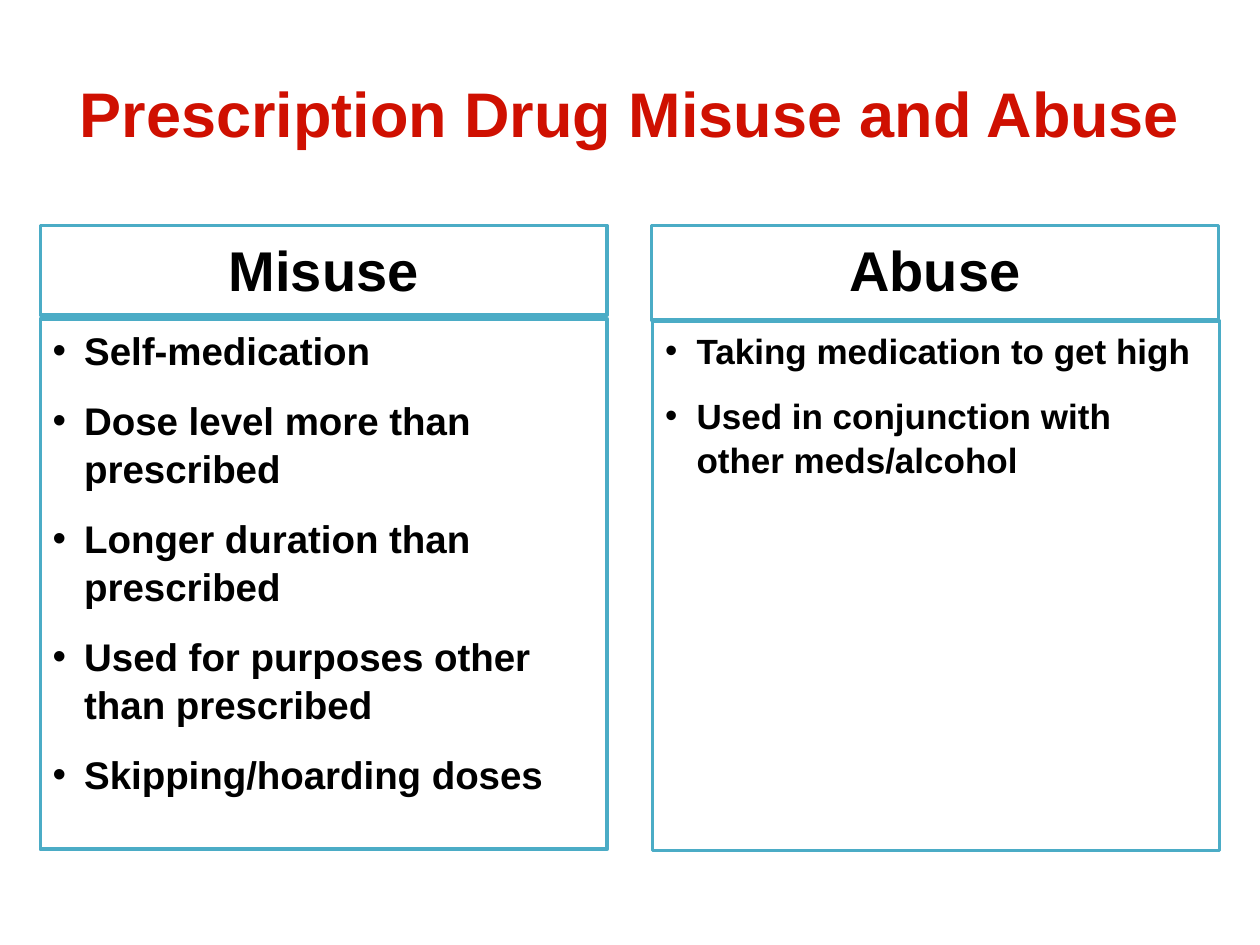
from lxml import etree
from pptx import Presentation
from pptx.dml.color import RGBColor
from pptx.enum.shapes import MSO_SHAPE
from pptx.enum.text import MSO_ANCHOR, PP_ALIGN
from pptx.oxml.ns import qn
from pptx.util import Inches, Pt

RECTANGLE = MSO_SHAPE.RECTANGLE
TOP, MIDDLE = MSO_ANCHOR.TOP, MSO_ANCHOR.MIDDLE
LEFT, CENTER = PP_ALIGN.LEFT, PP_ALIGN.CENTER
COLORS = {"title": "CF1001", "text": "000000", "panel": "FFFFFF", "border": "4BACC6"}
COLUMN_WIDTH = 4.5


def write(box, lines, size, color="text", align=CENTER, anchor=TOP, bulleted=False):
    frame = box.text_frame
    frame.word_wrap = True
    frame.vertical_anchor = anchor
    for index, line in enumerate(lines):
        para = frame.paragraphs[0] if index == 0 else frame.add_paragraph()
        para.text = line
        para.alignment = align
        para.line_spacing = 1.05
        if bulleted:
            if index:
                para.space_before = Pt(6)
            para.space_after = Pt(6)
            properties = para._p.get_or_add_pPr()
            properties.set("marL", str(Inches(0.25)))
            properties.set("indent", str(Inches(-0.25)))
            etree.SubElement(properties, qn("a:buFont"), typeface="Arial")
            etree.SubElement(properties, qn("a:buChar"), char="•")
        font = para.runs[0].font
        for name, value in {"name": "Arial", "size": Pt(size), "bold": True}.items():
            setattr(font, name, value)
        font.color.rgb = RGBColor.from_string(COLORS[color])


def add_panel(left, top, height):
    """Add a white, outlined rectangle of column width."""
    panel = page.shapes.add_shape(
        RECTANGLE, Inches(left), Inches(top), Inches(COLUMN_WIDTH), Inches(height))
    panel.shadow.inherit = False
    panel.fill.solid()
    panel.fill.fore_color.rgb = RGBColor.from_string(COLORS["panel"])
    panel.line.color.rgb = RGBColor.from_string(COLORS["border"])
    panel.line.width = Pt(2)
    return panel


deck = Presentation()
deck.slide_width, deck.slide_height = Inches(10), Inches(7.5)
page = deck.slides.add_slide(deck.slide_layouts[6])

title = page.shapes.add_textbox(Inches(0.5), Inches(0.25), Inches(9), Inches(1.25))
write(title, ["Prescription Drug Misuse and Abuse"], 36, "title", anchor=MIDDLE)

columns = [
    {"heading": "Misuse", "heading_box": (0.32, 1.79, 0.71),
     "list_box": (0.32, 2.53, 4.21), "size": 22,
     "items": ["Self-medication",
               "Dose level more than prescribed",
               "Longer duration than prescribed",
               "Used for purposes other than prescribed",
               "Skipping/hoarding doses"]},
    {"heading": "Abuse", "heading_box": (5.17, 1.79, 0.75),
     "list_box": (5.18, 2.55, 4.2), "size": 20,
     "items": ["Taking medication to get high",
               "Used in conjunction with other meds/alcohol"]},
]
for column in columns:
    write(add_panel(*column["list_box"]), column["items"], column["size"],
          align=LEFT, bulleted=True)
    write(add_panel(*column["heading_box"]), [column["heading"]], 32)

deck.save("out.pptx")
